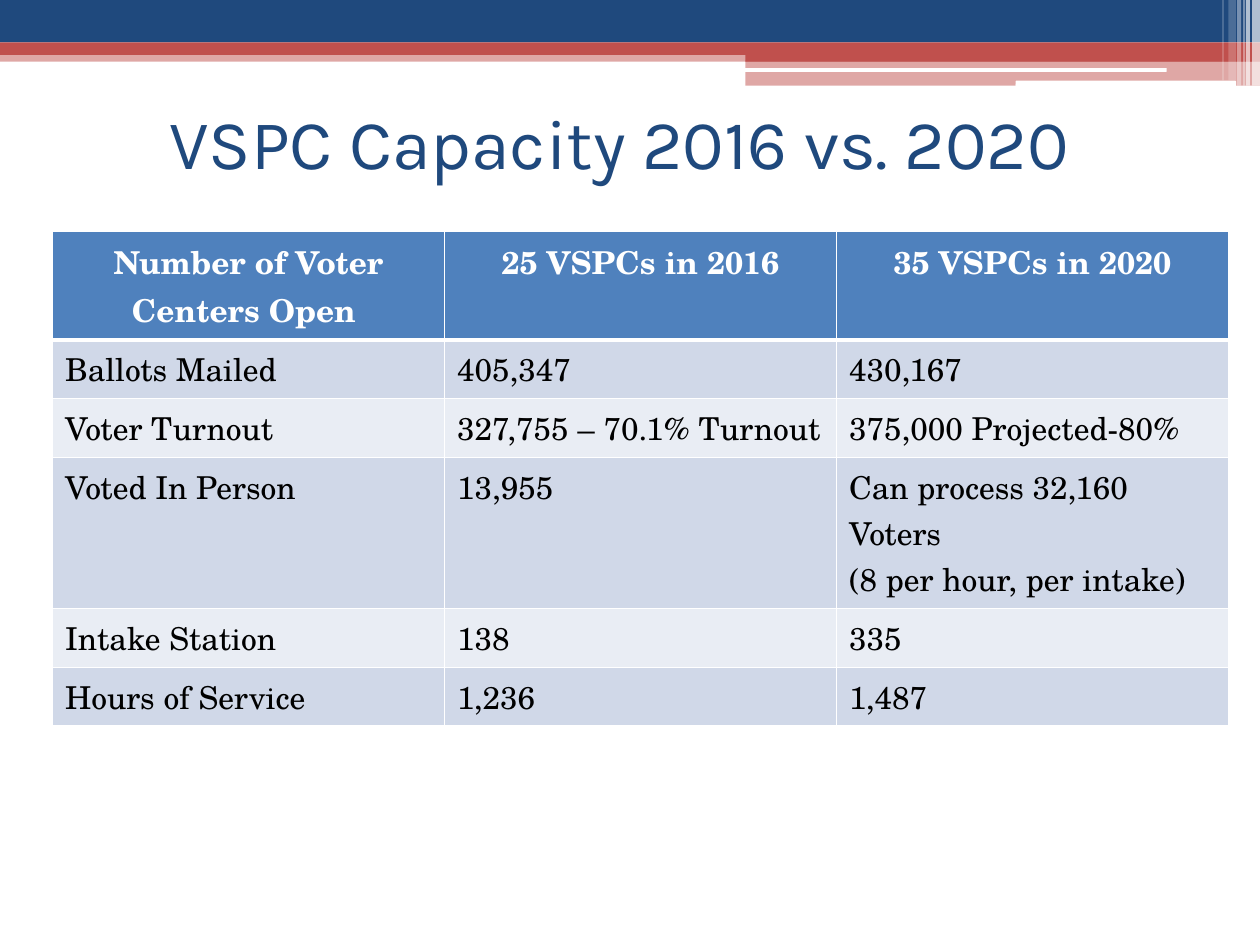
from lxml.etree import SubElement
from pptx import Presentation
from pptx.dml.color import RGBColor as Color
from pptx.enum.shapes import MSO_SHAPE as Shape
from pptx.enum.text import MSO_ANCHOR as Anchor, PP_ALIGN as Align
from pptx.oxml.ns import qn
from pptx.util import Pt

THEME = {
    "navy": "1F497D", "red": "C0504D", "white": "FFFFFF", "black": "000000",
    "header": "4F81BD", "bands": ("D0D8E8", "E9EDF4"),
    "title_font": "Karla", "body_font": "TeX Gyre Schola",
    "title_size": 40, "body_size": 18,
}
TITLE = "VSPC Capacity 2016 vs. 2020"
ROWS = [
    ("Number of Voter Centers Open ", "25 VSPCs in 2016", "35 VSPCs in 2020"),
    ("Ballots Mailed", "405,347", "430,167"),
    ("Voter Turnout", "327,755 – 70.1% Turnout", "375,000 Projected-80%"),
    ("Voted In Person", "13,955", "Can process 32,160 Voters\n(8 per hour, per intake)"),
    ("Intake Station", "138", "335"),
    ("Hours of Service", "1,236", "1,487"),
]
ROW_HEIGHTS = [62.2, 33.6, 33.6, 86.4, 33.6, 33.6]
BANDS = [
    (0, 28.8, 720, 6.48, "red", 50),
    (0, 0, 720, 24.2, "navy", 100),
    (0, 24.2, 720, 7.2, "red", 100),
    (426, 28.08, 294, 7.2, "red", 100),
    (426, 34.56, 294, 14.4, "red", 50),
]
PILLS = [(425.5, 38.9, 241.2, 2.2), (580.3, 46.1, 126, 3.2)]
STRIPES = [
    (715.5, 4.5, 49, 65), (712, 2.2, 49, 65), (710.5, 0.7, 49, 60),
    (707, 2.2, 49, 40), (702, 4.3, 46, 20), (698.5, 0.7, 46, 30),
]
TABLE_LEFT, TABLE_TOP, TABLE_WIDTH = 30, 132, 672


def add_block(slide, box, color, opacity=100, kind=Shape.RECTANGLE):
    shape = slide.shapes.add_shape(kind, *map(Pt, box))
    shape.shadow.inherit = False
    shape.line.fill.background()
    shape.fill.solid()
    shape.fill.fore_color.rgb = Color.from_string(THEME[color])
    if opacity < 100:
        fill_color = shape.fill._xPr.find(qn("a:solidFill"))[0]
        SubElement(fill_color, qn("a:alpha"), val=str(opacity * 1000))


def write_text(frame, text, align, color, formats):
    frame.text = text
    for paragraph in frame.paragraphs:
        paragraph.alignment = align
        for run in paragraph.runs:
            run.font.color.rgb = Color.from_string(THEME[color])
            for name, value in formats.items():
                setattr(run.font, name, value)


def add_borders(cell, widths):
    properties = cell._tc.get_or_add_tcPr()
    for side, width in widths.items():
        line = SubElement(properties, qn(f"a:ln{side}"), w=str(Pt(width)))
        fill = SubElement(line, qn("a:solidFill"))
        SubElement(fill, qn("a:srgbClr"), val=THEME["white"])


def add_header_art(slide):
    for *box, color, opacity in BANDS:
        add_block(slide, box, color, opacity)
    for box in PILLS:
        add_block(slide, box, "white", kind=Shape.ROUNDED_RECTANGLE)
    for left, width, height, opacity in STRIPES:
        add_block(slide, (left, 0, width, height), "white", opacity)


def add_title(slide):
    frame = slide.shapes.add_textbox(*map(Pt, (30, 48, 648, 66))).text_frame
    frame.word_wrap = True
    frame.vertical_anchor = Anchor.MIDDLE
    formats = {"name": THEME["title_font"], "size": Pt(THEME["title_size"])}
    write_text(frame, TITLE, Align.CENTER, "navy", formats)


def add_capacity_table(slide):
    box = (TABLE_LEFT, TABLE_TOP, TABLE_WIDTH, sum(ROW_HEIGHTS))
    table = slide.shapes.add_table(len(ROWS), len(ROWS[0]), *map(Pt, box)).table
    for row_index, (row, height) in enumerate(zip(ROWS, ROW_HEIGHTS)):
        table.rows[row_index].height = Pt(height)
        header = row_index == 0
        fill = THEME["header"] if header else THEME["bands"][(row_index - 1) % 2]
        borders = {"L": 1, "R": 1, "T": 3 if row_index == 1 else 1, "B": 3 if header else 1}
        formats = {"name": THEME["body_font"], "size": Pt(THEME["body_size"]), "bold": header}
        for column_index, text in enumerate(row):
            cell = table.cell(row_index, column_index)
            add_borders(cell, borders)
            cell.fill.solid()
            cell.fill.fore_color.rgb = Color.from_string(fill)
            write_text(cell.text_frame, text, Align.CENTER if header else Align.LEFT,
                       "white" if header else "black", formats)


def main():
    """Build the voter centre capacity slide."""
    presentation = Presentation()
    presentation.slide_width, presentation.slide_height = Pt(720), Pt(540)
    slide = presentation.slides.add_slide(presentation.slide_layouts[6])
    add_header_art(slide)
    add_title(slide)
    add_capacity_table(slide)
    presentation.save("out.pptx")


if __name__ == "__main__":
    main()
